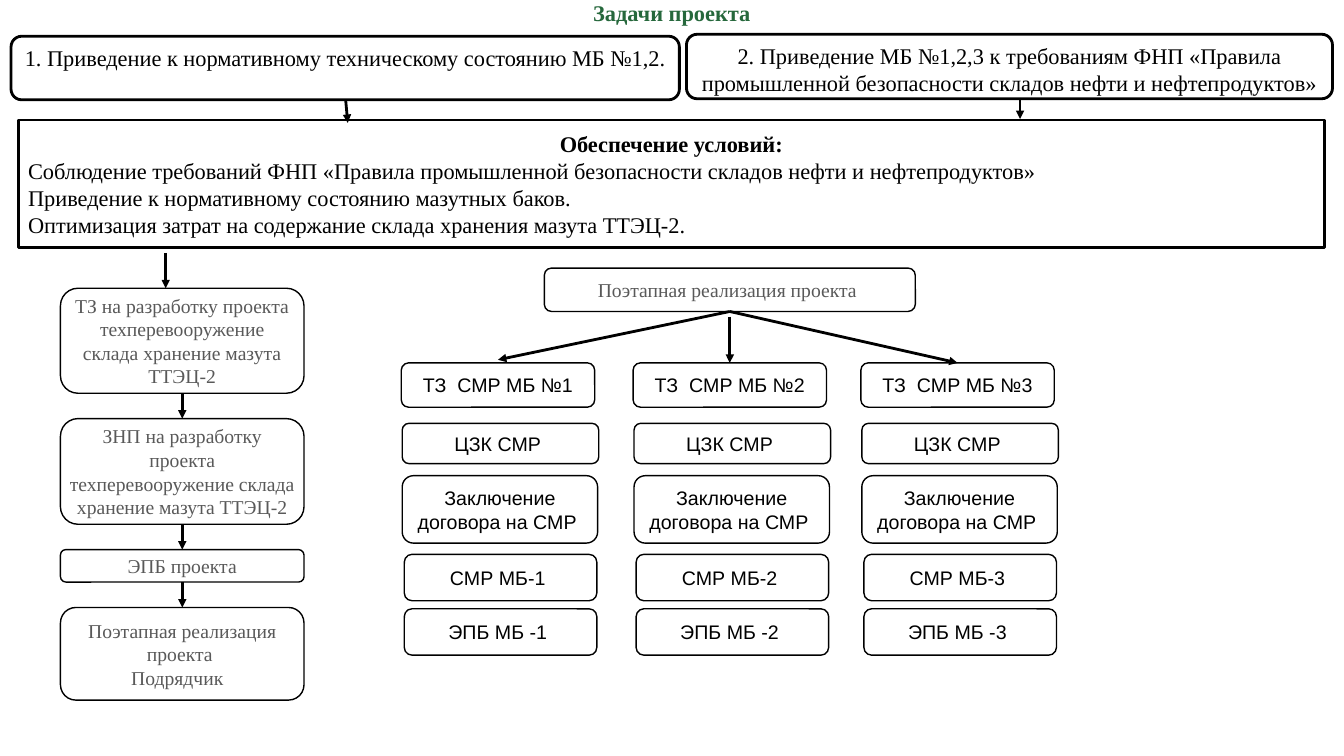
from lxml import etree
from pptx import Presentation
from pptx import util as u
from pptx.dml.color import RGBColor
from pptx.enum import shapes, text
from pptx.oxml.ns import qn

Pt = u.Pt
BLACK = RGBColor(0, 0, 0)
GRAY = RGBColor(0x59, 0x59, 0x59)
GREEN = RGBColor(0x26, 0x68, 0x3C)
ROUND = shapes.MSO_SHAPE.ROUNDED_RECTANGLE
RECT = shapes.MSO_SHAPE.RECTANGLE
TOP = text.MSO_ANCHOR.TOP
MID = text.MSO_ANCHOR.MIDDLE
LEFT = text.PP_ALIGN.LEFT
MIDDLE = text.PP_ALIGN.CENTER
SERIF = "Times New Roman"
BIG = dict(name=SERIF, size=Pt(16), color=BLACK, bold=False)
STEP = dict(name=SERIF, size=Pt(14), color=GRAY, bold=False)
WORK = dict(name="Arial", size=Pt(14), color=BLACK, bold=False)


def style(font, form):
    for key, val in form.items():
        if key == "color":
            font.color.rgb = val
        else:
            setattr(font, key, val)


def write(shape, lines, form, pad, anchor):
    frame = shape.text_frame
    side, edge = pad
    margins = dict(margin_left=Pt(side), margin_right=Pt(side),
                   margin_top=Pt(edge), margin_bottom=Pt(edge),
                   word_wrap=True, vertical_anchor=anchor)
    for key, val in margins.items():
        setattr(frame, key, val)
    for i, line in enumerate(lines):
        para = frame.paragraphs[0] if i == 0 else frame.add_paragraph()
        para.alignment = MIDDLE
        run = para.add_run()
        run.text = line
        style(run.font, form)
    return frame


def block(slide, box, lines, form, pad=(2.88, 3.6), width=1, kind=ROUND, anchor=MID):
    shape = slide.shapes.add_shape(kind, *map(Pt, box))
    shape.shadow.inherit = False
    shape.fill.background()
    shape.line.color.rgb = BLACK
    shape.line.width = Pt(width)
    return write(shape, lines, form, pad, anchor)


def arrow(slide, x1, y1, x2, y2):
    line = slide.shapes.add_connector(
        shapes.MSO_CONNECTOR.STRAIGHT, Pt(x1), Pt(y1), Pt(x2), Pt(y2))
    line.line.color.rgb = BLACK
    line.line.width = Pt(2)
    tail = etree.SubElement(line.line._get_or_add_ln(), qn("a:tailEnd"))
    tail.set("type", "triangle")
    etree.SubElement(line._element.spPr, qn("a:effectLst"))


def title(slide, box):
    shape = slide.shapes.add_textbox(*map(Pt, box))
    frame = write(shape, ["Задачи проекта"], dict(BIG, color=GREEN, bold=True), (0, 0), TOP)
    frame.paragraphs[0].line_spacing = 0.85


def goals(slide, box):
    x, y, w, h = box
    look = dict(form=BIG, pad=(7.2, 3.6), width=2, anchor=TOP)
    block(slide, (x, y + 1.4, 477.4, h - 0.7),
          ["1. Приведение к нормативному техническому состоянию МБ №1,2."], **look)
    block(slide, (x + w - 461.5, y, 461.5, h),
          ["2. Приведение МБ №1,2,3 к требованиям ФНП «Правила промышленной "
           "безопасности складов нефти и нефтепродуктов» "], **look)
    arrow(slide, x + 239, y + 46.8, x + 240.5, y + 63.3)
    arrow(slide, x + 720.7, y + 45.4, x + 720.7, y + 60.5)


def terms(slide, box):
    x, y, w, h = box
    frame = block(slide, box, [
        "Обеспечение условий:",
        "Соблюдение требований ФНП «Правила промышленной безопасности складов нефти и нефтепродуктов»",
        "Приведение к нормативному состоянию мазутных баков.",
        "Оптимизация затрат на содержание склада хранения мазута ТТЭЦ-2.",
    ], BIG, pad=(7.2, 3.6), width=2, kind=RECT)
    head, *rest = frame.paragraphs
    head.runs[0].font.bold = True
    for para in rest:
        para.alignment = LEFT
    arrow(slide, x + 105.4, y + h + 3.6, x + 105.4, y + h + 28.8)


def design(slide, box):
    x, y, w, h = box
    gap = 18.1
    steps = [
        (75, 6, ["ТЗ на разработку проекта техперевооружение склада хранение мазута ТТЭЦ-2"]),
        (75.5, 2.88, ["ЗНП на разработку проекта техперевооружение склада хранение мазута ТТЭЦ-2"]),
        (23.2, 2.88, ["ЭПБ проекта"]),
        (66.2, 2.88, ["Поэтапная реализация проекта ", "Подрядчик  "]),
    ]
    for i, (tall, side, lines) in enumerate(steps):
        if i:
            arrow(slide, x + w / 2, y - gap, x + w / 2, y)
        block(slide, (x, y, w, tall), lines, STEP, pad=(side, 3.6))
        y += tall + gap


def stage(slide, box, num):
    x, y, w, h = box
    rows = [
        (0, 0, 0, 31.7, f"ТЗ  СМР МБ №{num}"),
        (0.7, 43.2, 2.2, 28.8, "ЦЗК СМР "),
        (0.7, 80.6, 1.4, 48.2, "Заключение договора на СМР "),
        (2.2, 136.8, -0.7, 33.1, f"СМР МБ-{num} "),
        (2.2, 175.7, -0.7, 33.1, f"ЭПБ МБ -{num} "),
    ]
    for dx, dy, more, tall, line in rows:
        block(slide, (x + dx, y + dy, w + more, tall), [line], WORK)


def stages(slide, box):
    x, y, w, h = box
    block(slide, (x + 102.2, y, 265, 31), ["Поэтапная реализация проекта "], STEP)
    top = y + 67.7
    for num, dx in enumerate((0, 165.6, 328.3), 1):
        stage(slide, (x + dx, top, 138.2, h - 67.7), num)
    fork = x + 234.7
    arrow(slide, fork, y + 31, x + 69.1, top - 2.2)
    arrow(slide, fork, y + 31, x + 397.4, top)
    arrow(slide, fork, y + 34.6, fork, top)


def main():
    deck = Presentation()
    deck.slide_width, deck.slide_height = Pt(960), Pt(540)
    slide = deck.slides.add_slide(deck.slide_layouts[6])
    title(slide, (43.2, 2.2, 873.4, 28.1))
    goals(slide, (7.9, 24.5, 943.9, 46.1))
    terms(slide, (13, 85.7, 933.1, 91.4))
    design(slide, (43.2, 205.9, 174, 293.8))
    stages(slide, (286.6, 191.5, 469, 276.5))
    deck.save("out.pptx")


if __name__ == "__main__":
    main()
